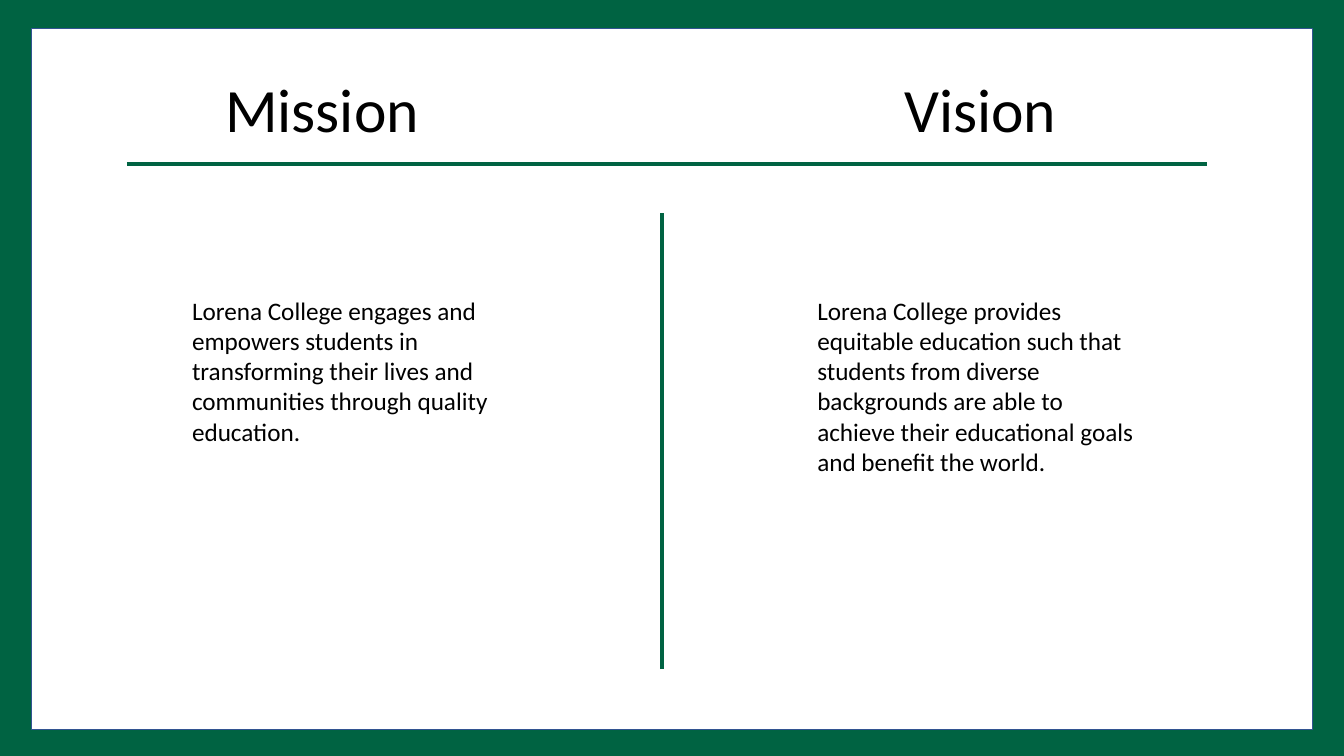
from pptx import Presentation
from pptx.dml.color import RGBColor
from pptx.enum import shapes, text
from pptx.oxml.ns import qn
from pptx.util import Pt

COLORS = {"green": "006342", "edge": "325491", "ink": "000000"}
FONT = "Calibri"

deck = Presentation()
deck.slide_width, deck.slide_height = Pt(960), Pt(540)
slide = deck.slides.add_slide(deck.slide_layouts[6])


def add_text(left, top, width, height, words, size):
    box = slide.shapes.add_textbox(Pt(left), Pt(top), Pt(width), Pt(height))
    box.text_frame.word_wrap = True
    para = box.text_frame.paragraphs[0]
    run = para.add_run()
    run.text = words
    run.font.name = FONT
    run.font.size = Pt(size)
    run.font.color.rgb = RGBColor.from_string(COLORS["ink"])
    return box.text_frame, para


# Green border, running past the slide edges
frame = slide.shapes.add_shape(
    shapes.MSO_SHAPE.FRAME, Pt(-60.8), Pt(-63), Pt(1081.4), Pt(667.4))
frame.shadow.inherit = False
frame.fill.solid()
frame.fill.fore_color.rgb = RGBColor.from_string(COLORS["green"])
frame.line.color.rgb = RGBColor.from_string(COLORS["edge"])
frame.line.width = Pt(0.5)

# Rule under the headings, then the divider between the columns
for x1, y1, x2, y2 in [(90.7, 117.2, 862.5, 117.2), (472.7, 478, 472.7, 152.5)]:
    rule = slide.shapes.add_connector(
        shapes.MSO_CONNECTOR.STRAIGHT, Pt(x1), Pt(y1), Pt(x2), Pt(y2))
    rule.line.color.rgb = RGBColor.from_string(COLORS["green"])
    rule.line.width = Pt(3)
    props = rule._element.spPr
    props.append(props.makeelement(qn("a:effectLst"), {}))

# Heading, heading left, body left, body
columns = [
    ("Mission", 70.6, 130.1,
     "Lorena College engages and empowers students in transforming their "
     "lives and communities through quality education."),
    ("Vision", 540.8, 576.7,
     "Lorena College provides equitable education such that students from "
     "diverse backgrounds are able to achieve their educational goals and "
     "benefit the world."),
]
for head, head_left, body_left, body in columns:
    area, para = add_text(head_left, 28, 319, 104.4, head, 44)
    area.vertical_anchor = text.MSO_ANCHOR.MIDDLE
    para.alignment = text.PP_ALIGN.CENTER
    para.line_spacing = 0.9
    add_text(body_left, 207.2, 247, 159.8, body, 18)

deck.save("out.pptx")
